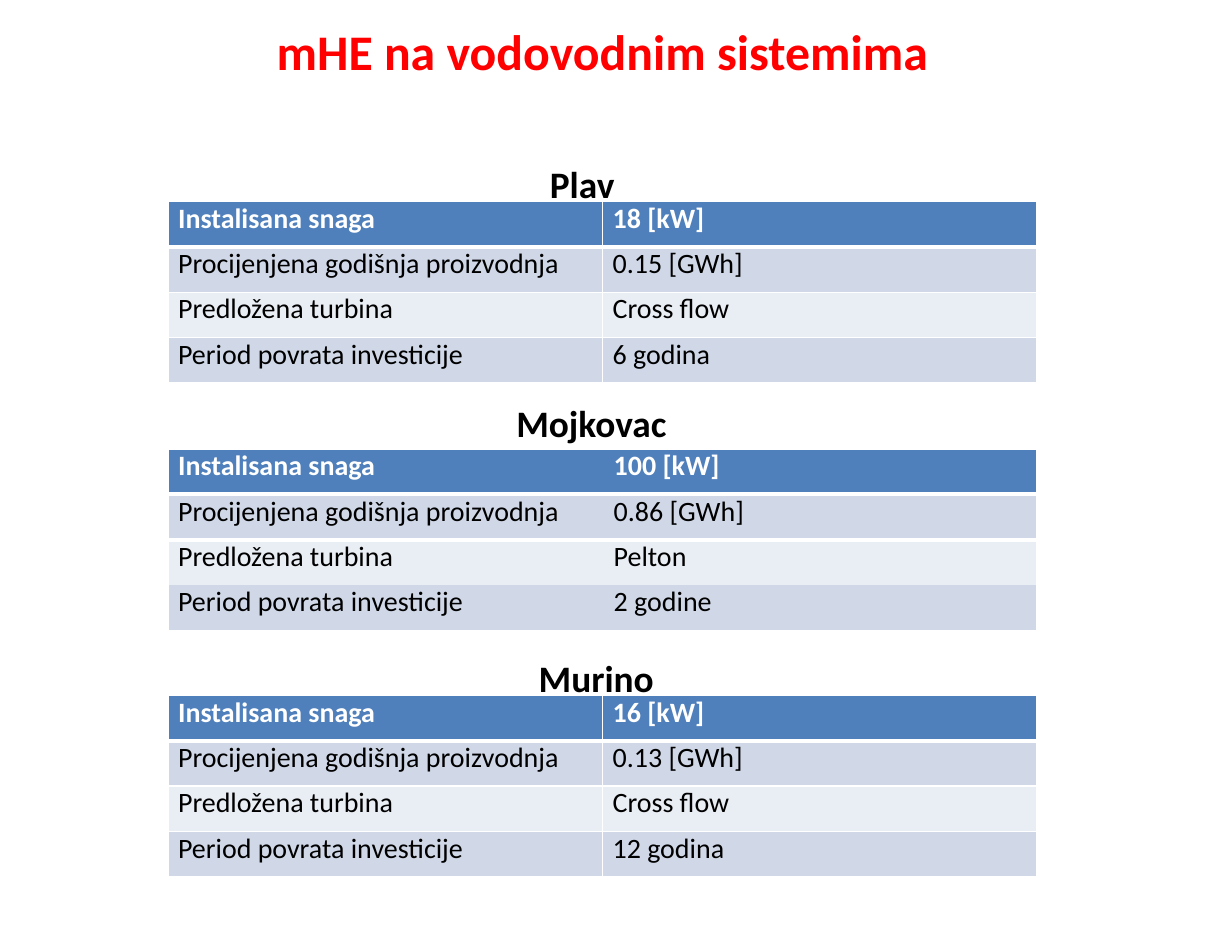
import pptx
import pptx.dml.color
import pptx.oxml.ns
import pptx.util
from lxml import etree

Inches = pptx.util.Inches
Pt = pptx.util.Pt

FONT = "Calibri"
COLORS = {
    "title": "FF0000",
    "text": "000000",
    "white": "FFFFFF",
    "header": "4F80BC",
    "dark_band": "D0D8E8",
    "light_band": "E9EDF4",
}
ROW_FILLS = ["header", "dark_band", "light_band", "dark_band"]
LABELS = [
    "Instalisana snaga",
    "Procijenjena godišnja proizvodnja",
    "Predložena turbina",
    "Period povrata investicije",
]
FULL_GRID = {
    "columns": [3.88, 3.88],
    "indent": 0.09,
    "row_lines": [1, 3, 1, 1, 1],
    "column_lines": [1, 1, 1],
}
OPEN_GRID = {
    "columns": [3.74, 4.02],
    "indent": 0.24,
    "row_lines": [1, 3, 3, 0, 1],
    "column_lines": [1, 0, 1],
}
PLANTS = [
    ("Plav", (4.91, 1.44, 0.6), 1.8, FULL_GRID,
     ["18 [kW]", "0.15 [GWh]", "Cross flow", "6 godina"]),
    ("Mojkovac", (4.61, 3.57, 1.37), 4.01, OPEN_GRID,
     ["100 [kW]", "0.86 [GWh]", "Pelton", "2 godine"]),
    ("Murino", (4.81, 5.85, 1.06), 6.21, FULL_GRID,
     ["16 [kW]", "0.13 [GWh]", "Cross flow", "12 godina"]),
]


def color(name):
    """Return the named colour."""
    return pptx.dml.color.RGBColor.from_string(COLORS[name])


def style(paragraph, size, color_name, bold):
    """Set the font of a paragraph."""
    font = paragraph.font
    font.name = FONT
    font.size = Pt(size)
    font.bold = bold
    font.color.rgb = color(color_name)


def add_heading(slide, text, left, top, width, height, size, color_name, inset_top=0):
    """Add a bold one-line text box."""
    box = slide.shapes.add_textbox(Inches(left), Inches(top), Inches(width), Inches(height))
    frame = box.text_frame
    frame.word_wrap = False
    frame.margin_left = frame.margin_right = frame.margin_bottom = 0
    frame.margin_top = Inches(inset_top)
    frame.text = text
    style(frame.paragraphs[0], size, color_name, True)


def set_borders(cell, widths):
    """Draw white cell borders, leaving out those of zero width."""
    properties = cell._tc.get_or_add_tcPr()
    for index, (side, width) in enumerate(zip("LRTB", widths)):
        line = etree.Element(pptx.oxml.ns.qn(f"a:ln{side}"), w=str(Pt(width)))
        if width:
            fill = etree.SubElement(line, pptx.oxml.ns.qn("a:solidFill"))
            etree.SubElement(fill, pptx.oxml.ns.qn("a:srgbClr"), val=COLORS["white"])
        else:
            etree.SubElement(line, pptx.oxml.ns.qn("a:noFill"))
        properties.insert(index, line)


def fill_cell(cell, text, row, indent):
    """Write one cell and give it the fill of its row."""
    cell.fill.solid()
    cell.fill.fore_color.rgb = color(ROW_FILLS[row])
    cell.margin_left = Inches(indent)
    cell.margin_right = cell.margin_top = cell.margin_bottom = 0
    cell.text = text
    is_header = row == 0
    style(cell.text_frame.paragraphs[0], 18, "white" if is_header else "text", is_header)


def add_plant_table(slide, top, grid, values):
    """Add the table with the figures of one plant."""
    frame = slide.shapes.add_table(
        len(LABELS), 2, Inches(1.5), Inches(top), Inches(7.76), Inches(1.62))
    table = frame.table
    table.first_row = table.horz_banding = False
    for column, width in zip(table.columns, grid["columns"]):
        column.width = Inches(width)
    row_lines, column_lines = grid["row_lines"], grid["column_lines"]
    for row, texts in enumerate(zip(LABELS, values)):
        for column, text in enumerate(texts):
            cell = table.cell(row, column)
            fill_cell(cell, text, row, grid["indent"] if column else 0.09)
            set_borders(cell, column_lines[column:column + 2] + row_lines[row:row + 2])


def main():
    """Build and save the slide."""
    presentation = pptx.Presentation()
    presentation.slide_width = Inches(11)
    presentation.slide_height = Inches(8.5)
    slide = presentation.slides.add_slide(presentation.slide_layouts[6])
    for name, (left, top, width), table_top, grid, values in PLANTS:
        add_heading(slide, name, left, top, width, 0.43, 24, "text")
        add_plant_table(slide, table_top, grid, values)
    add_heading(slide, "mHE na vodovodnim sistemima", 2.47, -0.02, 6.79, 0.76, 32, "title", 0.21)
    presentation.save("out.pptx")


if __name__ == "__main__":
    main()
